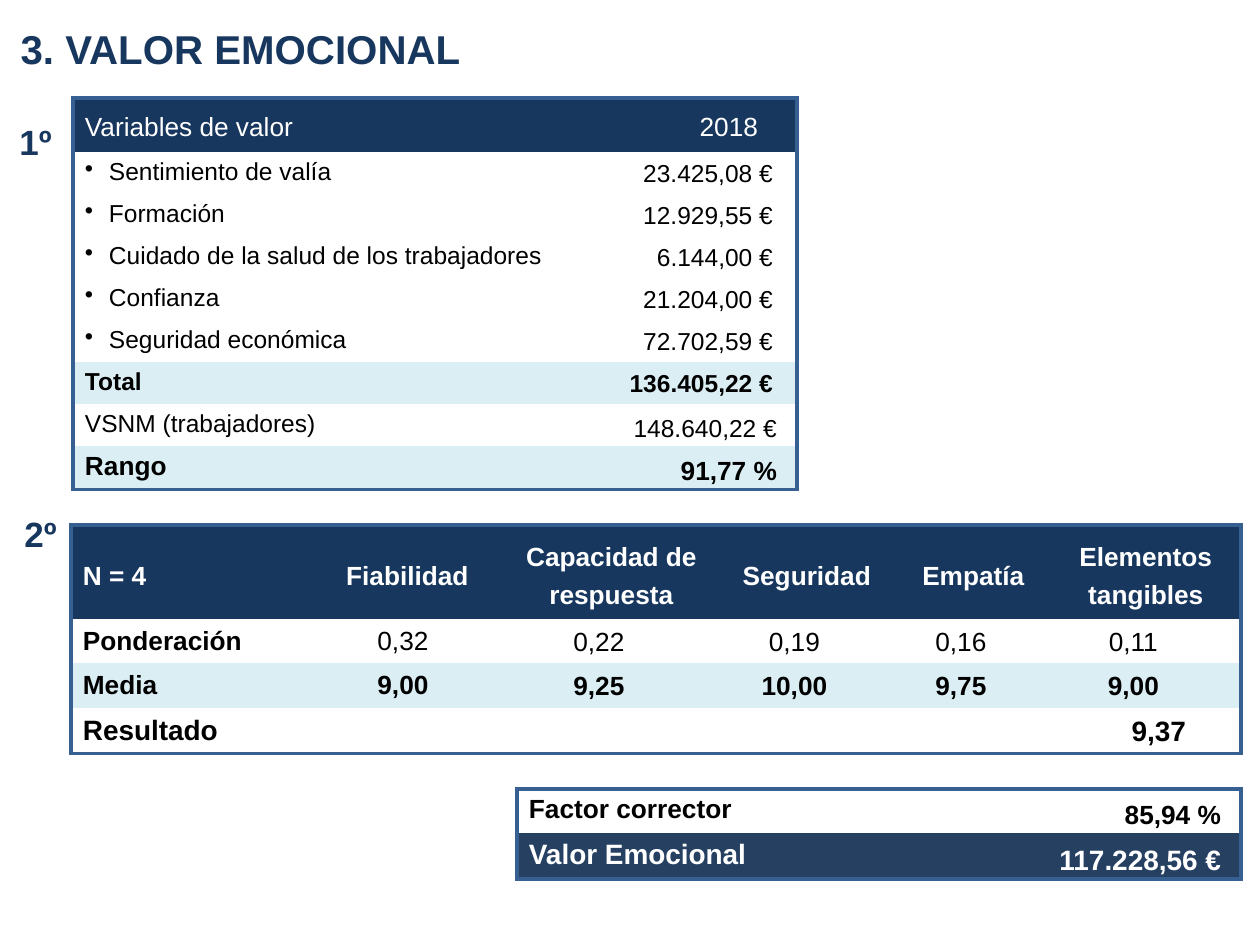
from dataclasses import dataclass, replace

from lxml.etree import SubElement
from pptx import Presentation
from pptx.dml.color import RGBColor
from pptx.enum.text import MSO_ANCHOR, MSO_AUTO_SIZE, PP_ALIGN
from pptx.oxml.ns import qn
from pptx.util import Pt

PX = 914400 // 126
COLORS = {
    "navy": "17375E", "steel": "254061", "border": "376092",
    "pale": "DBEEF4", "white": "FFFFFF", "black": "000000",
}


@dataclass(frozen=True)
class Style:
    size: int = 14
    bold: bool = False
    color: str = "black"
    align: PP_ALIGN = PP_ALIGN.LEFT
    anchor: MSO_ANCHOR = MSO_ANCHOR.TOP
    left: int = 12
    right: int = 12
    vertical: int = 6
    spacing: float = 1.0
    after: int = 0
    bullet: bool = False


@dataclass(frozen=True)
class Row:
    height: int
    fill: str
    cells: list[tuple[str, Style]]


@dataclass(frozen=True)
class TableSpec:
    left: int
    top: int
    columns: list[int]
    rows: list[Row]


def rgb(name: str) -> RGBColor:
    return RGBColor.from_string(COLORS[name])


def format_paragraph(paragraph, style: Style) -> None:
    paragraph.alignment = style.align
    paragraph.line_spacing = style.spacing
    paragraph.space_before = Pt(0)
    paragraph.space_after = Pt(style.after)
    font = paragraph.font
    font.name, font.size, font.bold = "Arial", Pt(style.size), style.bold
    font.color.rgb = rgb(style.color)


def indent(paragraph, margin: int, first: int) -> None:
    properties = paragraph._p.get_or_add_pPr()
    properties.set("marL", str(margin * PX))
    properties.set("indent", str(first * PX))


def add_bullet(paragraph) -> None:
    indent(paragraph, 24, -24)
    properties = paragraph._p.get_or_add_pPr()
    bullet = SubElement(properties, qn("a:buChar"), char="•")
    properties.find(qn("a:defRPr")).addprevious(bullet)


def draw_borders(cell, outer_sides: dict[str, bool]) -> None:
    """Line the outer sides of a cell and clear the others."""
    properties = cell._tc.get_or_add_tcPr()
    for side, outer in outer_sides.items():
        line = SubElement(properties, qn(f"a:ln{side}"), w=str(Pt(2.25)))
        if outer:
            fill = SubElement(line, qn("a:solidFill"))
            SubElement(fill, qn("a:srgbClr"), val=COLORS["border"])
        else:
            SubElement(line, qn("a:noFill"))


def write_cell(cell, text: str, style: Style) -> None:
    cell.vertical_anchor = style.anchor
    cell.margin_left, cell.margin_right = style.left * PX, style.right * PX
    cell.margin_top = cell.margin_bottom = style.vertical * PX
    cell.text = text
    paragraph = cell.text_frame.paragraphs[0]
    format_paragraph(paragraph, style)
    if style.bullet:
        add_bullet(paragraph)


def draw_table(slide, spec: TableSpec) -> None:
    """Draw a table; a row's last cell spans any columns left over."""
    row_count, column_count = len(spec.rows), len(spec.columns)
    table = slide.shapes.add_table(
        row_count, column_count, spec.left * PX, spec.top * PX,
        sum(spec.columns) * PX, sum(row.height for row in spec.rows) * PX,
    ).table
    table.first_row = table.horz_banding = False
    for column, width in zip(table.columns, spec.columns):
        column.width = width * PX
    for r, row in enumerate(spec.rows):
        table.rows[r].height = row.height * PX
        last = len(row.cells) - 1
        if last < column_count - 1:
            table.cell(r, last).merge(table.cell(r, column_count - 1))
        for c in range(column_count):
            cell = table.cell(r, c)
            draw_borders(cell, {"L": c == 0, "R": c >= last,
                                "T": r == 0, "B": r == row_count - 1})
            cell.fill.solid()
            cell.fill.fore_color.rgb = rgb(row.fill)
        for c, (text, style) in enumerate(row.cells):
            write_cell(table.cell(r, c), text, style)


def place_heading(shape, text: str, box: tuple[int, int, int, int],
                  size: int, margin: int, first: int = 0) -> None:
    shape.left, shape.top, shape.width, shape.height = (v * PX for v in box)
    frame = shape.text_frame
    frame.text = text
    frame.word_wrap = True
    frame.auto_size = MSO_AUTO_SIZE.SHAPE_TO_FIT_TEXT
    frame.vertical_anchor = MSO_ANCHOR.TOP
    paragraph = frame.paragraphs[0]
    format_paragraph(paragraph, Style(size, True, "navy", spacing=1.3))
    indent(paragraph, margin, first)


LABEL = Style()
BOLD = Style(bold=True)
BOLD_15 = Style(15, True)
ITEM = Style(bullet=True)
HEADER = Style(15, color="white", spacing=1.3)
YEAR = replace(HEADER, align=PP_ALIGN.RIGHT, right=39)
AMOUNT = Style(align=PP_ALIGN.RIGHT, anchor=MSO_ANCHOR.MIDDLE,
               left=9, right=24, vertical=0, spacing=1.07, after=3)
SUMMARY = replace(AMOUNT, right=20, spacing=1.3, after=0)
FACTOR_HEAD = replace(HEADER, bold=True, anchor=MSO_ANCHOR.MIDDLE)
FACTOR_NAME = replace(FACTOR_HEAD, align=PP_ALIGN.CENTER)
FACTOR_LABEL = replace(BOLD_15, anchor=MSO_ANCHOR.MIDDLE)
FACTOR_VALUE = replace(AMOUNT, size=15, align=PP_ALIGN.CENTER, left=0, right=25)
FIRST_VALUE = replace(FACTOR_VALUE, right=9, spacing=1.0, after=0)
RESULT = replace(AMOUNT, size=16, bold=True, left=0, right=55)

VARIABLES = [
    ("Sentimiento de valía", "23.425,08 €"),
    ("Formación", "12.929,55 €"),
    ("Cuidado de la salud de los trabajadores", "6.144,00 €"),
    ("Confianza", "21.204,00 €"),
    ("Seguridad económica", "72.702,59 €"),
]
FACTORS = ["Fiabilidad", "Capacidad de respuesta", "Seguridad", "Empatía",
           "Elementos tangibles"]
WEIGHTS = ["0,32", "0,22", "0,19", "0,16", "0,11"]
MEANS = ["9,00", "9,25", "10,00", "9,75", "9,00"]


def factor_row(height: int, fill: str, label: str, values: list[str], bold: bool) -> Row:
    styles = [FIRST_VALUE] + [FACTOR_VALUE] * (len(values) - 1)
    return Row(height, fill, [(label, FACTOR_LABEL)] + [
        (value, replace(style, bold=bold)) for value, style in zip(values, styles)])


TABLES = [
    TableSpec(73, 98, [496, 228], [
        Row(54, "navy", [("Variables de valor", HEADER), ("2018", YEAR)]),
        *(Row(42, "white", [(name, ITEM), (amount, AMOUNT)])
          for name, amount in VARIABLES),
        Row(42, "pale", [("Total", BOLD), ("136.405,22 €", replace(AMOUNT, bold=True))]),
        Row(42, "white", [("VSNM (trabajadores)", LABEL), ("148.640,22 €", SUMMARY)]),
        Row(43, "pale", [("Rango", BOLD_15),
                         ("91,77 %", replace(SUMMARY, size=15, bold=True))]),
    ]),
    TableSpec(71, 525, [239, 195, 213, 178, 155, 190], [
        Row(94, "navy", [("N = 4", FACTOR_HEAD)]
            + [(name, FACTOR_NAME) for name in FACTORS]),
        factor_row(44, "white", "Ponderación", WEIGHTS, False),
        factor_row(45, "pale", "Media", MEANS, True),
        Row(45, "white", [("Resultado", replace(FACTOR_LABEL, size=16)), ("9,37", RESULT)]),
    ]),
    TableSpec(517, 789, [496, 228], [
        Row(44, "white", [("Factor corrector", BOLD_15),
                          ("85,94 %", replace(SUMMARY, size=15, bold=True))]),
        Row(46, "steel", [
            ("Valor Emocional", Style(16, True, "white")),
            ("117.228,56 €", replace(SUMMARY, size=16, bold=True, color="white"))]),
    ]),
]


def main() -> None:
    deck = Presentation()
    deck.slide_width, deck.slide_height = 1260 * PX, 945 * PX
    slide = deck.slides.add_slide(deck.slide_layouts[5])
    place_heading(slide.shapes.title, "3. VALOR EMOCIONAL", (-5, 4, 567, 69), 23, 62, -49)
    for text, box in [("1º", (-5, 102, 716, 62)), ("2º", (0, 494, 76, 62))]:
        place_heading(slide.shapes.add_textbox(0, 0, 0, 0), text, box, 20, 12)
    for spec in TABLES:
        draw_table(slide, spec)
    deck.save("out.pptx")


if __name__ == "__main__":
    main()
